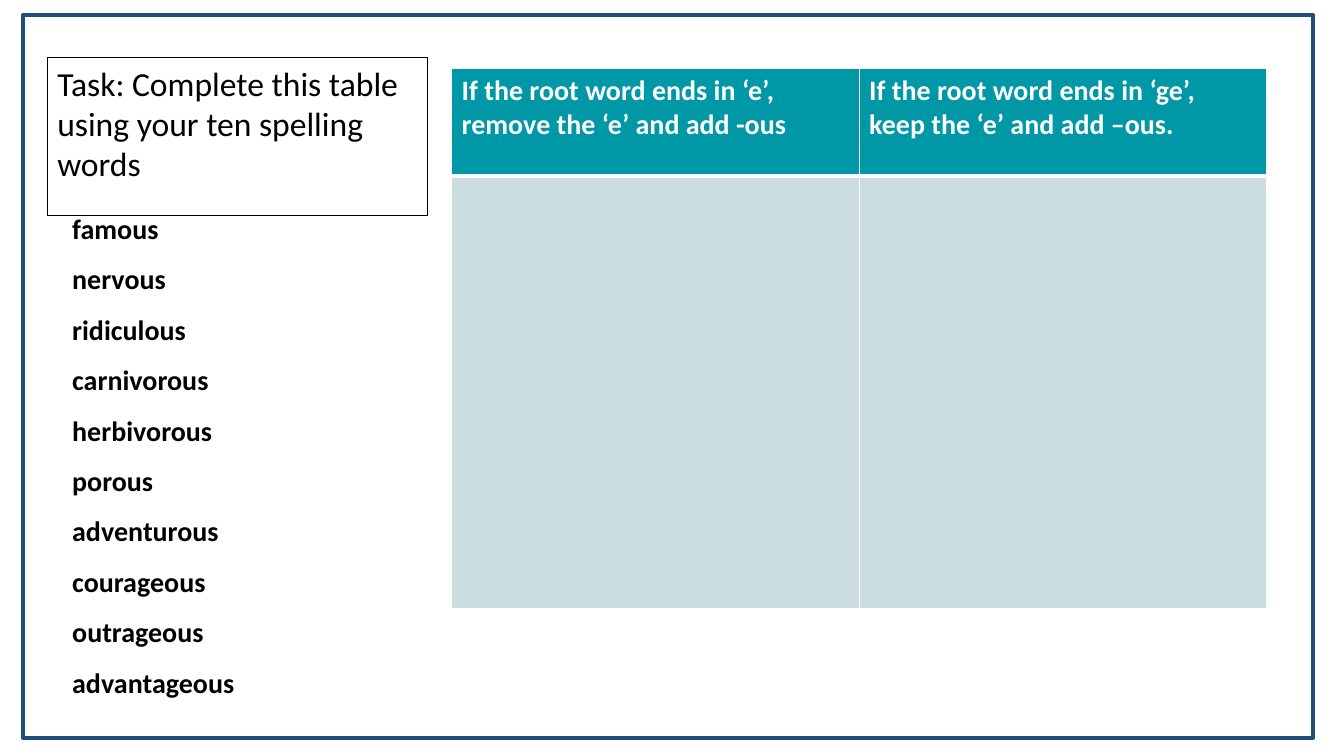
import pptx
import pptx.util
import pptx.dml.color
import pptx.enum.shapes
import pptx.enum.text
import pptx.oxml
import pptx.oxml.ns

Cm, Pt = pptx.util.Cm, pptx.util.Pt
RGBColor = pptx.dml.color.RGBColor

TASK = "Task: Complete this table using your ten spelling words"
WORDS = ["famous", "nervous", "ridiculous", "carnivorous", "herbivorous",
         "porous", "adventurous", "courageous", "outrageous", "advantageous"]
RULES = ["If the root word ends in ‘e’, remove the ‘e’ and add -ous",
         "If the root word ends in ‘ge’, keep the ‘e’ and add –ous."]

NAVY = RGBColor(0x1F, 0x4E, 0x79)
TEAL = RGBColor(0x00, 0x97, 0xA7)
PALE = RGBColor(0xCC, 0xDD, 0xE1)
BLACK = RGBColor(0, 0, 0)
WHITE = RGBColor(255, 255, 255)

# left, top, width, height in cm
FRAME = (0.58, 0.38, 32.51, 18.21)
TASK_BOX = (1.19, 1.45, 9.58, 3.33)
WORD_BOX = (1.57, 4.78, 7.16, 13.08)
TABLE_LEFT, TABLE_TOP, COL_WIDTH = 11.38, 1.73, 10.27
ROW_HEIGHTS = [2.7, 10.9]


def format_text(tf, size, color, bold=False, spacing=1.0):
    for p in tf.paragraphs:
        p.alignment = pptx.enum.text.PP_ALIGN.LEFT
        p.line_spacing = spacing
        for r in p.runs:
            r.font.name = "Calibri"
            r.font.size = Pt(size)
            r.font.bold = bold
            r.font.color.rgb = color


def set_borders(cell, widths):
    """Draw white cell borders; widths maps L, R, T, B to points."""
    tcPr = cell._tc.get_or_add_tcPr()
    for i, side in enumerate("LRTB"):
        tcPr.insert(i, pptx.oxml.parse_xml(
            f'<a:ln{side} {pptx.oxml.ns.nsdecls("a")} w="{Pt(widths[side])}">'
            f'<a:solidFill><a:srgbClr val="{WHITE}"/></a:solidFill></a:ln{side}>'))


def add_frame(s):
    sp = s.shapes.add_shape(pptx.enum.shapes.MSO_SHAPE.RECTANGLE, *map(Cm, FRAME))
    sp.shadow.inherit = False
    sp.fill.background()
    sp.line.color.rgb = NAVY
    sp.line.width = Pt(3)


def add_task(s):
    sp = s.shapes.title
    sp.left, sp.top, sp.width, sp.height = map(Cm, TASK_BOX)
    sp.line.color.rgb = BLACK
    sp.line.width = Pt(0.75)
    tf = sp.text_frame
    tf.text = TASK
    tf.word_wrap = True
    tf.auto_size = pptx.enum.text.MSO_AUTO_SIZE.SHAPE_TO_FIT_TEXT
    tf.vertical_anchor = pptx.enum.text.MSO_ANCHOR.TOP
    format_text(tf, 24, BLACK)


def add_words(s):
    tf = s.shapes.add_textbox(*map(Cm, WORD_BOX)).text_frame
    tf.text = "\n".join(WORDS)
    tf.word_wrap = True
    tf.auto_size = pptx.enum.text.MSO_AUTO_SIZE.SHAPE_TO_FIT_TEXT
    format_text(tf, 20, BLACK, bold=True, spacing=1.5)


def add_rule_table(s):
    table = s.shapes.add_table(
        len(ROW_HEIGHTS), len(RULES), Cm(TABLE_LEFT), Cm(TABLE_TOP),
        Cm(COL_WIDTH * len(RULES)), Cm(sum(ROW_HEIGHTS))).table
    for row, height in zip(table.rows, ROW_HEIGHTS):
        row.height = Cm(height)
    for col, rule in enumerate(RULES):
        head, body = table.cell(0, col), table.cell(1, col)
        head.text = rule
        format_text(head.text_frame, 20, WHITE, bold=True)
        for cell, color, top, bottom in ((head, TEAL, 1, 3), (body, PALE, 3, 1)):
            cell.fill.solid()
            cell.fill.fore_color.rgb = color
            set_borders(cell, {"L": 1, "R": 1, "T": top, "B": bottom})


def main():
    prs = pptx.Presentation()
    prs.slide_width, prs.slide_height = Cm(33.87), Cm(19.05)
    s = prs.slides.add_slide(prs.slide_layouts[5])
    add_frame(s)
    add_task(s)
    add_words(s)
    add_rule_table(s)
    prs.save("out.pptx")


if __name__ == "__main__":
    main()
